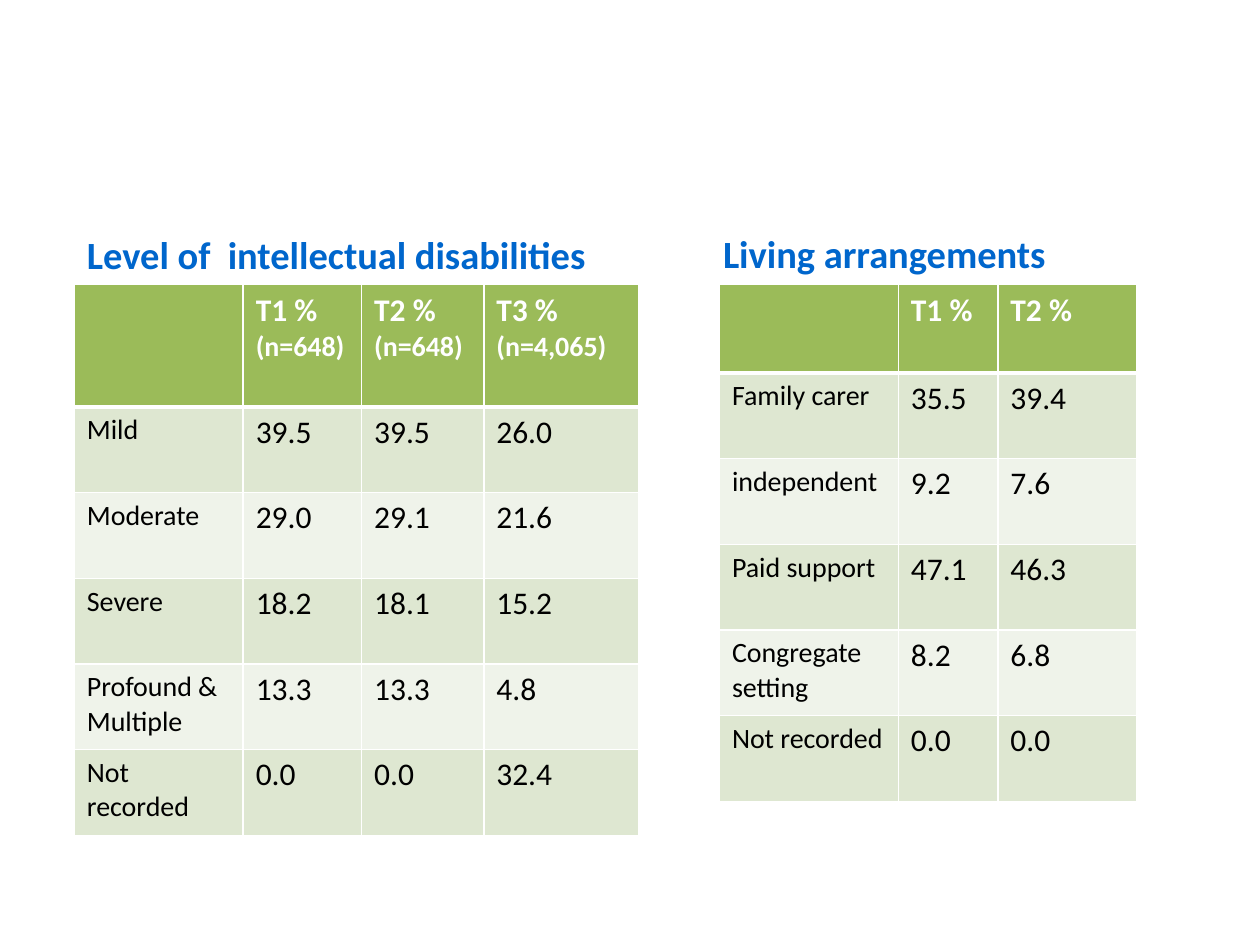
from dataclasses import dataclass

from lxml import etree
from pptx import Presentation
from pptx.dml.color import RGBColor
from pptx.enum import text
from pptx.oxml import ns
from pptx.util import Inches, Pt


@dataclass(frozen=True)
class Theme:
    font: str = "Calibri"
    heading: str = "0066CC"
    header_fill: str = "9BBB59"
    bands: tuple = ("DEE7D1", "EFF3EA")
    white: str = "FFFFFF"
    ink: str = "000000"
    heading_size: int = 22
    value_size: int = 18
    label_size: int = 16
    thin: int = 1
    thick: int = 3


THEME = Theme()
HEADING_TOP = 1.78
TABLE_TOP = 2.26
ROW_HEIGHT = 0.68

LEVELS = [
    ["", "T1 %\n(n=648)", "T2 %\n(n=648)", "T3 %\n(n=4,065)"],
    ["Mild", "39.5", "39.5", "26.0"],
    ["Moderate", "29.0", "29.1", "21.6"],
    ["Severe", "18.2", "18.1", "15.2"],
    ["Profound & Multiple", "13.3", "13.3", "4.8"],
    ["Not recorded", "0.0", "0.0", "32.4"],
]
LIVING = [
    ["", "T1 %", "T2 %"],
    ["Family carer", "35.5", "39.4"],
    ["independent", "9.2", "7.6"],
    ["Paid support", "47.1", "46.3"],
    ["Congregate setting", "8.2", "6.8"],
    ["Not recorded", "0.0", "0.0"],
]


def style_paragraph(paragraph, size, color, bold):
    for run in paragraph.runs:
        run.font.name = THEME.font
        run.font.size = Pt(size)
        run.font.bold = bold
        run.font.color.rgb = RGBColor.from_string(color)


def add_borders(cell, top, bottom):
    properties = cell._tc.get_or_add_tcPr()
    widths = {"lnL": THEME.thin, "lnR": THEME.thin, "lnT": top, "lnB": bottom}
    for side, width in widths.items():
        line = etree.SubElement(properties, ns.qn(f"a:{side}"), w=str(Pt(width)))
        fill = etree.SubElement(line, ns.qn("a:solidFill"))
        etree.SubElement(fill, ns.qn("a:srgbClr"), val=THEME.white)


def fill_cell(cell, content, row, column):
    header = row == 0
    add_borders(cell,
                top=THEME.thick if row == 1 else THEME.thin,
                bottom=THEME.thick if header else THEME.thin)
    cell.fill.solid()
    fill = THEME.header_fill if header else THEME.bands[(row - 1) % 2]
    cell.fill.fore_color.rgb = RGBColor.from_string(fill)
    cell.text_frame.text = content
    for index, paragraph in enumerate(cell.text_frame.paragraphs):
        # Row labels and sample sizes are smaller than the values
        small = index > 0 or column == 0 and not header
        style_paragraph(paragraph,
                        THEME.label_size if small else THEME.value_size,
                        THEME.white if header else THEME.ink, header)


def add_percent_table(slide, left, widths, header_height, rows):
    height = header_height + ROW_HEIGHT * (len(rows) - 1)
    table = slide.shapes.add_table(
        len(rows), len(widths), Inches(left), Inches(TABLE_TOP),
        Inches(sum(widths)), Inches(height)).table
    for column, width in zip(table.columns, widths):
        column.width = Inches(width)
    for row in table.rows:
        row.height = Inches(ROW_HEIGHT)
    table.rows[0].height = Inches(header_height)
    for r, values in enumerate(rows):
        for c, content in enumerate(values):
            fill_cell(table.cell(r, c), content, r, c)


def write_heading(box, heading):
    frame = box.text_frame
    frame.word_wrap = True
    frame.auto_size = text.MSO_AUTO_SIZE.NONE
    frame.vertical_anchor = text.MSO_ANCHOR.TOP
    frame.text = heading
    paragraph = frame.paragraphs[0]
    paragraph.alignment = text.PP_ALIGN.LEFT
    paragraph.space_before = Pt(0)
    style_paragraph(paragraph, THEME.heading_size, THEME.heading, True)


def main():
    deck = Presentation()
    deck.slide_width, deck.slide_height = Inches(10), Inches(7.5)
    slide = deck.slides.add_slide(deck.slide_layouts[0])
    title = slide.shapes.title._element
    title.getparent().remove(title)

    # Headings over the two tables
    levels_heading = slide.placeholders[1]
    levels_heading.left, levels_heading.top = Inches(0.59), Inches(HEADING_TOP)
    levels_heading.width, levels_heading.height = Inches(8.82), Inches(5.28)
    write_heading(levels_heading, "Level of  intellectual disabilities")
    living_heading = slide.shapes.add_textbox(
        Inches(5.64), Inches(HEADING_TOP), Inches(3.77), Inches(0.47))
    write_heading(living_heading, "Living arrangements")

    # Percentages at each time point
    add_percent_table(slide, 0.59, [1.34, 0.94, 0.97, 1.23], 0.97, LEVELS)
    add_percent_table(slide, 5.71, [1.42, 0.79, 1.1], 0.7, LIVING)

    deck.save("out.pptx")


if __name__ == "__main__":
    main()
